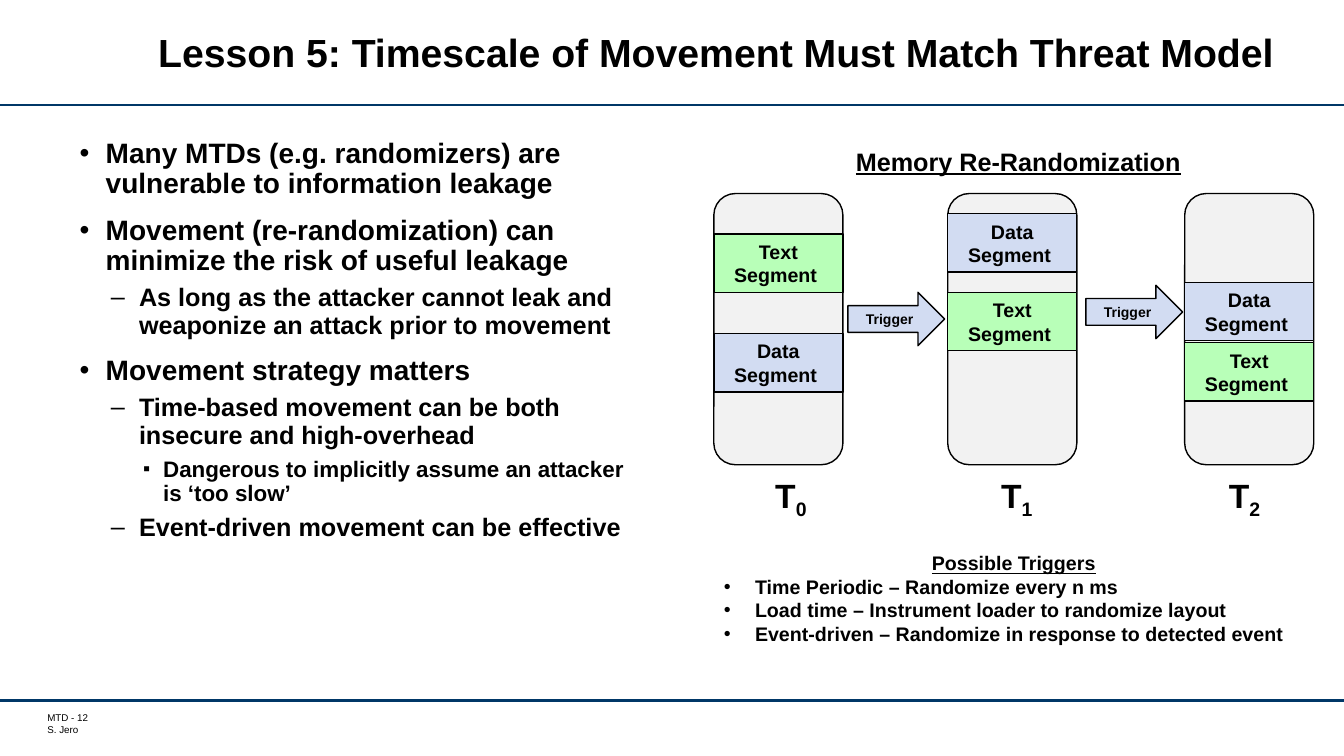
from lxml import etree
from pptx import Presentation
from pptx.dml.color import RGBColor
from pptx.enum.shapes import MSO_CONNECTOR, MSO_SHAPE
from pptx.enum.text import MSO_ANCHOR, MSO_AUTO_SIZE, PP_ALIGN
from pptx.oxml.ns import qn
from pptx.util import Inches, Pt

STRAIGHT = MSO_CONNECTOR.STRAIGHT
RECTANGLE = MSO_SHAPE.RECTANGLE
ROUNDED = MSO_SHAPE.ROUNDED_RECTANGLE
ARROW = MSO_SHAPE.RIGHT_ARROW
MIDDLE = MSO_ANCHOR.MIDDLE
CENTER = PP_ALIGN.CENTER
LEFT = PP_ALIGN.LEFT
NO_AUTOFIT = MSO_AUTO_SIZE.NONE

COLORS = {"black": "000000", "navy": "003767", "memory": "F2F2F2",
          "Text": "B8FFB8", "Data": "D2DCF2"}

LEVELS = [
    {"size": 20, "before": 12, "margin": 0.26, "hang": 0.26, "mark": "•", "scale": 100},
    {"size": 18, "before": 6, "margin": 0.59, "hang": 0.28, "mark": "–", "scale": 100},
    {"size": 16, "before": 6, "margin": 0.83, "hang": 0.2, "mark": "▪", "scale": 90},
]
POINTS = [
    (0, "Many MTDs (e.g. randomizers) are vulnerable to information leakage"),
    (0, "Movement (re-randomization) can minimize the risk of useful leakage"),
    (1, "As long as the attacker cannot leak and weaponize an attack prior to movement"),
    (0, "Movement strategy matters"),
    (1, "Time-based movement can be both insecure and high-overhead"),
    (2, "Dangerous to implicitly assume an attacker is ‘too slow’"),
    (1, "Event-driven movement can be effective"),
]
TRIGGERS = [
    "Time Periodic – Randomize every n ms",
    "Load time – Instrument loader to randomize layout",
    "Event-driven – Randomize in response to detected event",
]
MEMORY_STATES = [
    {"left": 7.08, "label": 7.58, "Text": 2.32, "Data": 3.31},
    {"left": 9.4, "label": 9.82, "Text": 2.9, "Data": 2.12},
    {"left": 11.75, "label": 12.08, "Text": 3.4, "Data": 2.8},
]
TRIGGER_ARROWS = [(8.41, 2.9), (10.77, 2.83)]


class SlideBuilder:
    """Hold the style and the current slide, and draw each kind of element."""

    font = "Arial"

    def __init__(self, slide):
        self.slide = slide

    def color(self, name):
        return RGBColor.from_string(COLORS[name])

    def format(self, para, size, bold=True, underline=False, align=LEFT):
        para.alignment = align
        for span in para.runs:
            span.font.name = self.font
            span.font.size = Pt(size)
            span.font.bold = bold
            span.font.underline = underline
            span.font.color.rgb = self.color("black")

    def bullet(self, para, mark, margin, hang, scale=100):
        properties = para._p.get_or_add_pPr()
        properties.set("marL", str(Inches(margin)))
        properties.set("indent", str(-Inches(hang)))
        for tag, key, value in (("a:buSzPct", "val", str(scale * 1000)),
                                ("a:buFont", "typeface", self.font),
                                ("a:buChar", "char", mark)):
            etree.SubElement(properties, qn(tag)).set(key, value)

    def title(self, text, left, top, width, height):
        box = self.slide.shapes.title
        box.left, box.top = Inches(left), Inches(top)
        box.width, box.height = Inches(width), Inches(height)
        frame = box.text_frame
        frame.text = text
        frame.auto_size = NO_AUTOFIT
        frame.vertical_anchor = MIDDLE
        para = frame.paragraphs[0]
        para.line_spacing = Pt(28)
        self.format(para, 28, align=CENTER)

    def text(self, lines, left, top, width, height, size,
             bold=True, underline=False, align=LEFT, wrap=True, inset=None):
        box = self.slide.shapes.add_textbox(
            Inches(left), Inches(top), Inches(width), Inches(height))
        frame = box.text_frame
        frame.word_wrap = wrap
        if inset is not None:
            frame.margin_left = frame.margin_right = Inches(inset)
            frame.margin_top = frame.margin_bottom = Inches(inset)
        frame.text = "\n".join(lines)
        for para in frame.paragraphs:
            self.format(para, size, bold, underline, align)
        return frame

    def outline(self, points, left, top, width, height):
        frame = self.text([text for _, text in points], left, top, width, height, 20)
        for index, (para, (depth, _)) in enumerate(zip(frame.paragraphs, points)):
            level = LEVELS[depth]
            para.level = depth
            self.bullet(para, level["mark"], level["margin"], level["hang"], level["scale"])
            para.line_spacing = 0.9
            para.space_before = Pt(level["before"] if index else 0)
            self.format(para, level["size"])

    def shape(self, kind, fill, left, top, width, height, text="", size=14):
        shape = self.slide.shapes.add_shape(
            kind, Inches(left), Inches(top), Inches(width), Inches(height))
        shape.shadow.inherit = False
        shape.fill.solid()
        shape.fill.fore_color.rgb = self.color(fill)
        shape.line.color.rgb = self.color("black")
        shape.line.width = Pt(1)
        if text:
            frame = shape.text_frame
            frame.text = text
            frame.vertical_anchor = MIDDLE
            for para in frame.paragraphs:
                self.format(para, size, align=CENTER)

    def rule(self, top):
        line = self.slide.shapes.add_connector(
            STRAIGHT, 0, Inches(top), Inches(13.33), Inches(top))
        line.line.color.rgb = self.color("navy")
        line.line.width = Pt(1.75)
        etree.SubElement(line._element.spPr, qn("a:effectLst"))

    def time_label(self, number, left, top):
        frame = self.text(["T"], left, top, 0.53, 0.5, 24, align=CENTER, wrap=False)
        para = frame.paragraphs[0]
        span = para.add_run()
        span.text = str(number)
        self.format(para, 24, align=CENTER)
        span._r.get_or_add_rPr().set("baseline", "-25000")


def main():
    deck = Presentation()
    deck.slide_width, deck.slide_height = Inches(13.33), Inches(7.5)
    page = SlideBuilder(deck.slides.add_slide(deck.slide_layouts[5]))

    for top in (1.04, 6.95):
        page.rule(top)
    page.text(["MTD - 12", "S. Jero"], 0.47, 7.06, 1.59, 0.24, 7, bold=False, inset=0)
    page.title("Lesson 5: Timescale of Movement Must Match Threat Model",
               1.37, 0.11, 11.46, 0.89)
    page.outline(POINTS, 0.69, 1.33, 5.81, 5.36)

    page.text(["Memory Re-Randomization"], 8.37, 1.4, 3.46, 0.4, 18,
              underline=True, align=CENTER, wrap=False)
    for number, state in enumerate(MEMORY_STATES):
        page.shape(ROUNDED, "memory", state["left"], 1.92, 1.28, 2.69)
        for segment in ("Text", "Data"):
            page.shape(RECTANGLE, segment, state["left"], state[segment], 1.28, 0.58,
                       f"{segment}\nSegment ")
        page.time_label(number, state["label"], 4.66)
    for left, top in TRIGGER_ARROWS:
        page.shape(ARROW, "Data", left, top, 0.96, 0.53, "Trigger", 10)

    frame = page.text(["Possible Triggers"] + TRIGGERS, 7.08, 5.42, 5.95, 1.04, 14)
    heading, *items = frame.paragraphs
    page.format(heading, 14, underline=True, align=CENTER)
    for para in items:
        page.bullet(para, "•", 0.31, 0.31)

    deck.save("out.pptx")


if __name__ == "__main__":
    main()
